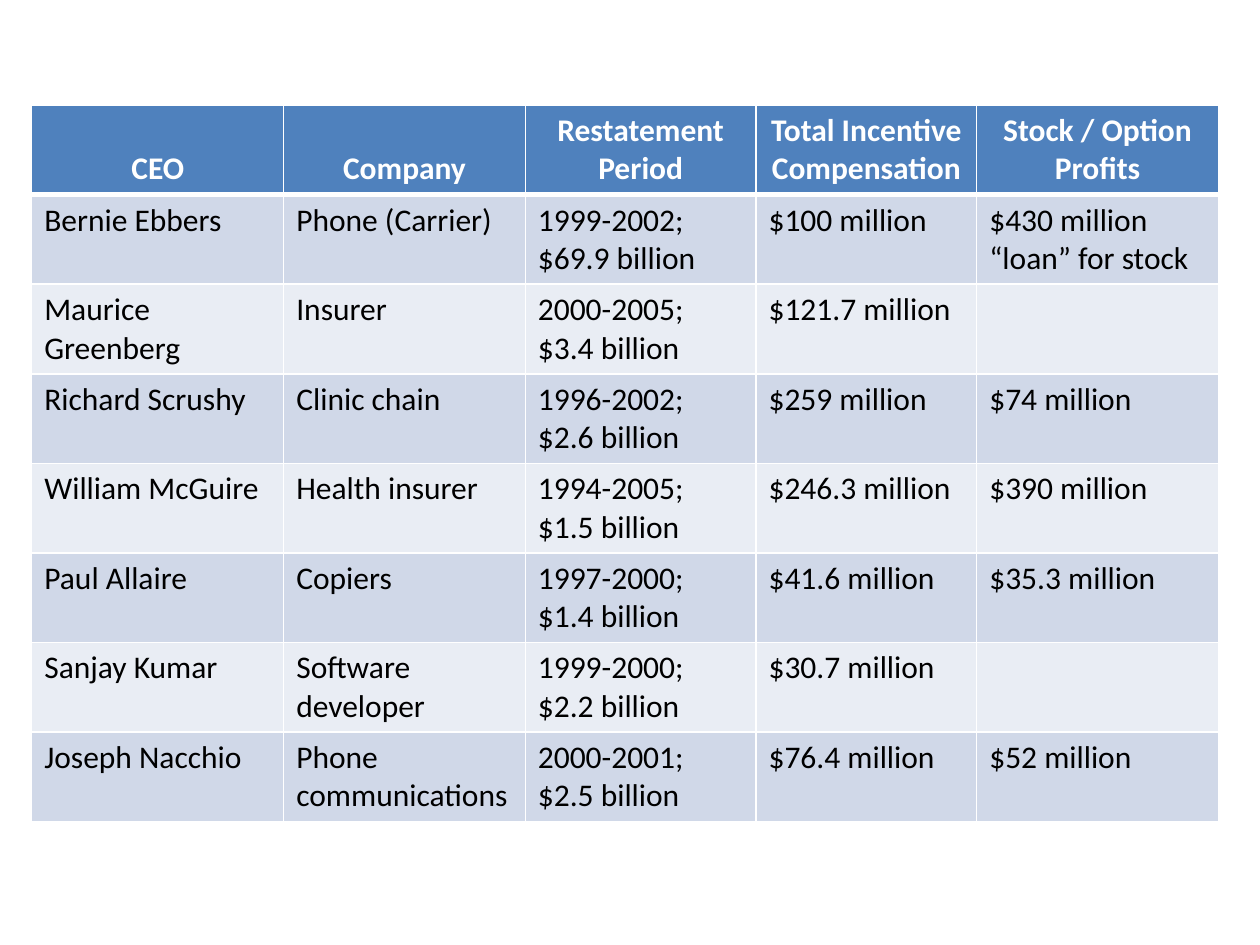
from lxml import etree
from pptx import Presentation
from pptx.dml.color import RGBColor
from pptx.enum.text import MSO_ANCHOR, PP_ALIGN
from pptx.oxml.ns import qn
from pptx.util import Cm, Pt

CENTER, LEFT = PP_ALIGN.CENTER, PP_ALIGN.LEFT
TOP, BOTTOM = MSO_ANCHOR.TOP, MSO_ANCHOR.BOTTOM

COLORS = {
    "header": "4F81BD",
    "odd_row": "D0D8E8",
    "even_row": "E9EDF4",
    "rule": "FFFFFF",
    "header_text": "FFFFFF",
    "body_text": "000000",
}
HEADINGS = ["CEO", "Company", "Restatement Period",
            "Total Incentive Compensation", "Stock / Option Profits"]
EXECUTIVES = [
    ["Bernie Ebbers", "Phone (Carrier)", "1999-2002;\n$69.9 billion",
     "$100 million", "$430 million “loan” for stock"],
    ["Maurice Greenberg", "Insurer", "2000-2005;\n$3.4 billion", "$121.7 million", ""],
    ["Richard Scrushy", "Clinic chain", "1996-2002;\n$2.6 billion",
     "$259 million", "$74 million"],
    ["William McGuire", "Health insurer", "1994-2005;\n$1.5 billion",
     "$246.3 million", "$390 million"],
    ["Paul Allaire", "Copiers", "1997-2000;\n$1.4 billion",
     "$41.6 million", "$35.3 million"],
    ["Sanjay Kumar", "Software developer", "1999-2000;\n$2.2 billion",
     "$30.7 million", ""],
    ["Joseph Nacchio", "Phone communications", "2000-2001;\n$2.5 billion",
     "$76.4 million", "$52 million"],
]
COLUMN_WIDTHS = [5.08, 4.87, 4.65, 4.45, 4.87]
TABLE_BOX = (0.64, 2.12, sum(COLUMN_WIDTHS), 14.4)


def set_borders(cell, widths):
    """Rule the cell's sides with the given widths in points."""
    properties = cell._tc.get_or_add_tcPr()
    for side, width in widths.items():
        border = etree.SubElement(properties, qn(f"a:ln{side}"), w=str(Pt(width)))
        fill = etree.SubElement(border, qn("a:solidFill"))
        etree.SubElement(fill, qn("a:srgbClr"), val=COLORS["rule"])


def format_cell(cell, content, fill, text_color, bold, alignment, anchor):
    """Fill one cell and style its text."""
    cell.text = content
    cell.vertical_anchor = anchor
    cell.fill.solid()
    cell.fill.fore_color.rgb = RGBColor.from_string(COLORS[fill])
    font_format = {"name": "Calibri", "size": Pt(18), "bold": bold}
    for paragraph in cell.text_frame.paragraphs:
        paragraph.alignment = alignment
        for attribute, value in font_format.items():
            setattr(paragraph.font, attribute, value)
        paragraph.font.color.rgb = RGBColor.from_string(COLORS[text_color])


def add_compensation_table(slide, box):
    """Place the executive compensation table in the box, given in cm."""
    records = [HEADINGS, *EXECUTIVES]
    left, top, width, height = (Cm(length) for length in box)
    table = slide.shapes.add_table(
        len(records), len(HEADINGS), left, top, width, height).table
    for column, column_width in zip(table.columns, COLUMN_WIDTHS):
        column.width = Cm(column_width)
    for index, record in enumerate(records):
        if index == 0:
            style = ("header", "header_text", True, CENTER, BOTTOM)
        else:
            band = "odd_row" if index % 2 else "even_row"
            style = (band, "body_text", False, LEFT, TOP)
        widths = {"L": 1, "R": 1, "T": 3 if index == 1 else 1,
                  "B": 3 if index == 0 else 1}
        for cell, content in zip(table.rows[index].cells, record):
            set_borders(cell, widths)
            format_cell(cell, content, *style)


def main():
    """Build and save the slide."""
    presentation = Presentation()
    presentation.slide_width, presentation.slide_height = Cm(25.4), Cm(19.05)
    slide = presentation.slides.add_slide(presentation.slide_layouts[6])
    add_compensation_table(slide, TABLE_BOX)
    presentation.save("out.pptx")


if __name__ == "__main__":
    main()
